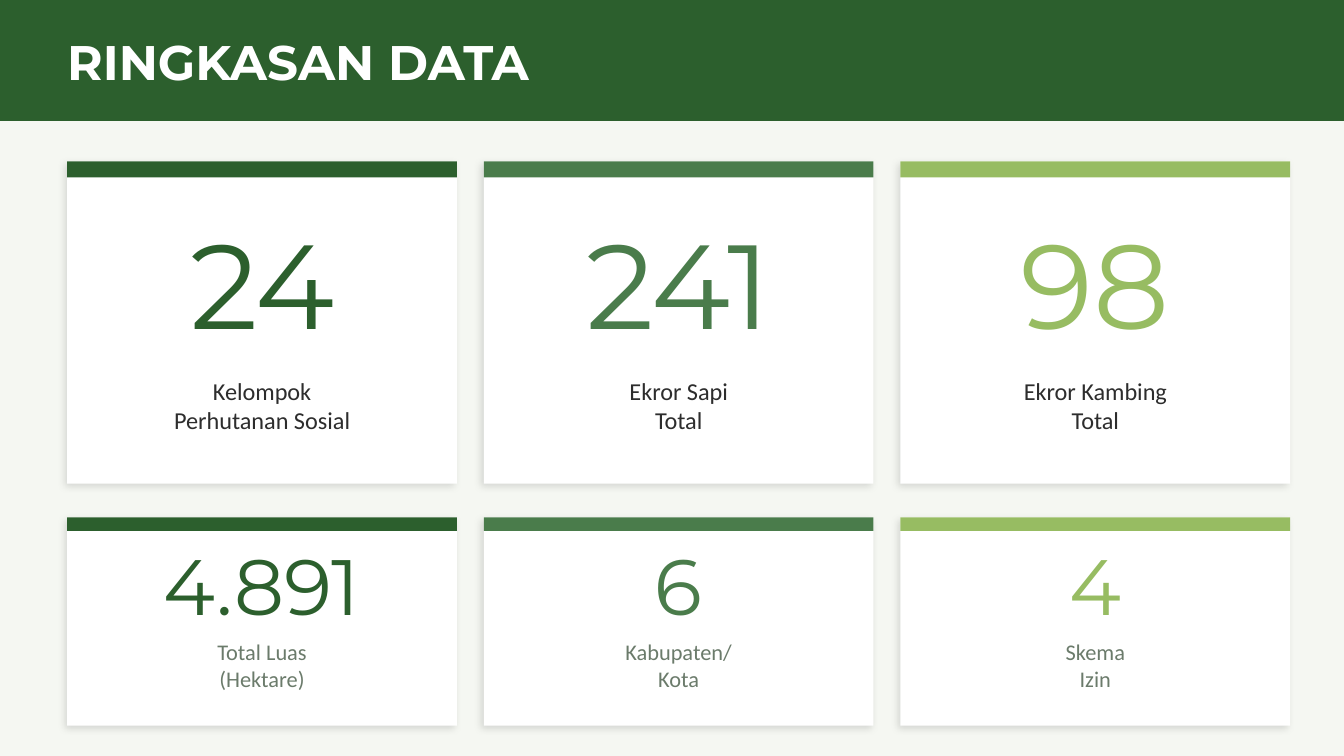
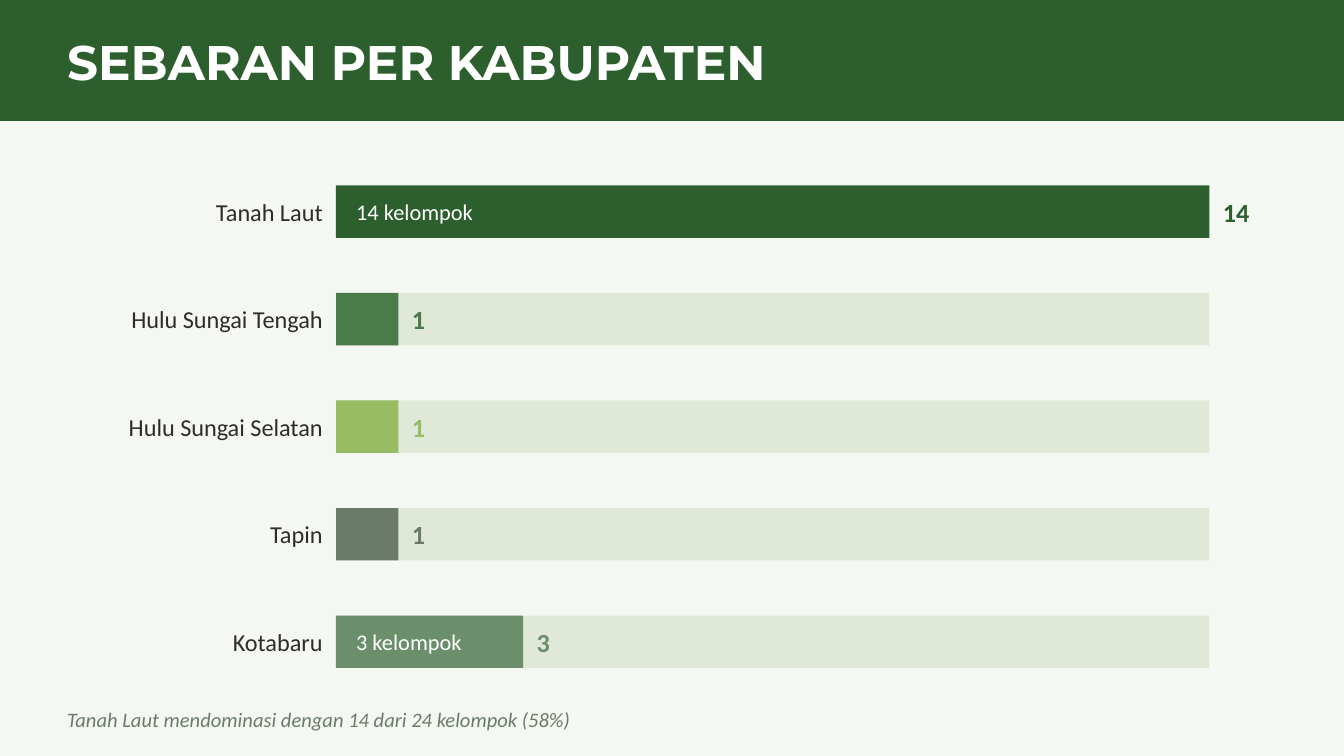
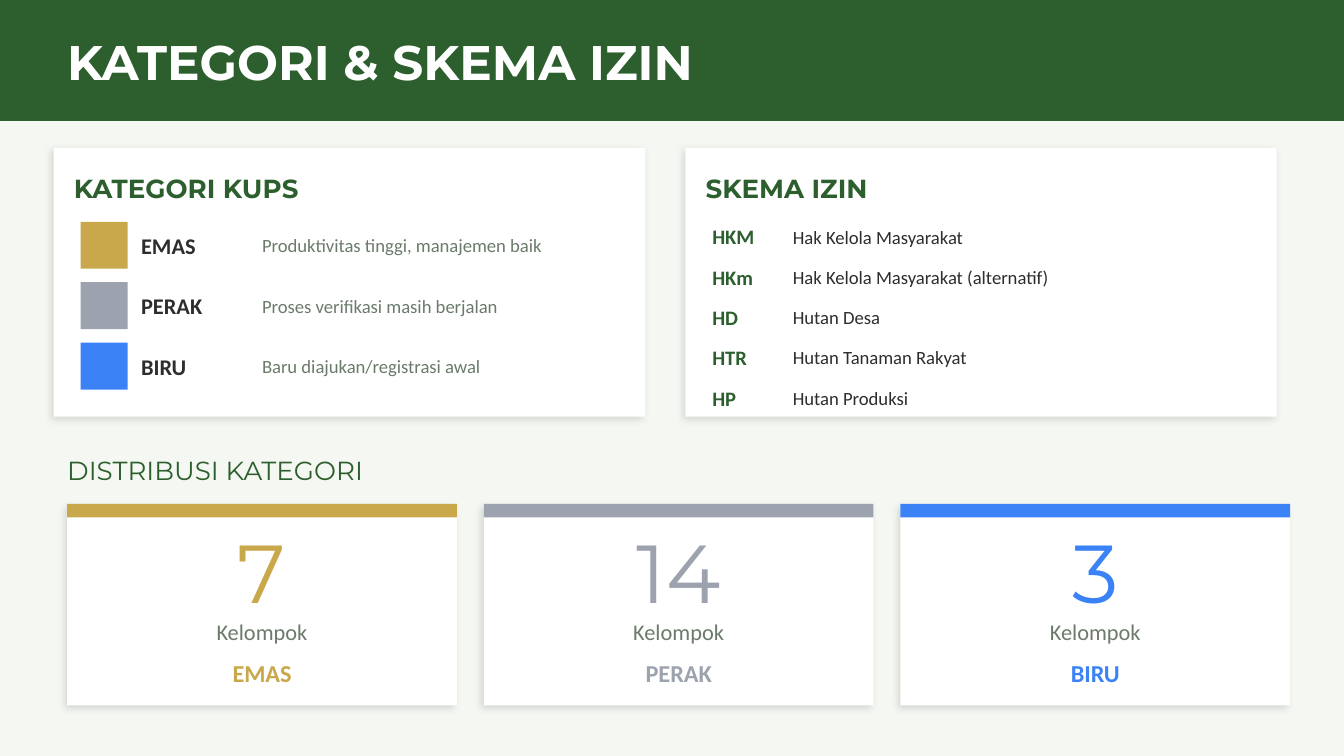
from lxml import etree
from pptx import Presentation
from pptx.dml.color import RGBColor
from pptx.enum import shapes, text
from pptx.oxml import ns
from pptx.util import Inches, Pt

FOREST = RGBColor(0x2C, 0x5F, 0x2D)
MOSS = RGBColor(0x4A, 0x7C, 0x4B)
LIME = RGBColor(0x97, 0xBC, 0x62)
SAGE = RGBColor(0x6B, 0x8E, 0x6B)
GREY = RGBColor(0x6B, 0x7B, 0x6B)
INK = RGBColor(0x2D, 0x2D, 0x2D)
TRACK = RGBColor(0xE0, 0xE8, 0xD8)
PAPER = RGBColor(0xF5, 0xF7, 0xF2)
WHITE = RGBColor(0xFF, 0xFF, 0xFF)
GOLD = RGBColor(0xC9, 0xA8, 0x4C)
SILVER = RGBColor(0x9C, 0xA3, 0xAF)
BLUE = RGBColor(0x3B, 0x82, 0xF6)

HEAD_FONT = "Montserrat"
BODY_FONT = "Calibri"
LEFT = text.PP_ALIGN.LEFT
CENTER = text.PP_ALIGN.CENTER
RIGHT = text.PP_ALIGN.RIGHT
MIDDLE = text.MSO_ANCHOR.MIDDLE
TOP = text.MSO_ANCHOR.TOP

CARD_LEFT, CARD_WIDTH, CARD_STEP = 0.5, 2.9, 3.1
BAR_LEFT, BAR_WIDTH, BAR_HEIGHT = 2.5, 6.5, 0.39


def add_rect(s, x, y, w, h, color):
    sp = s.shapes.add_shape(shapes.MSO_SHAPE.RECTANGLE, Inches(x), Inches(y), Inches(w), Inches(h))
    sp.fill.solid()
    sp.fill.fore_color.rgb = color
    sp.line.fill.background()
    sp.shadow.inherit = False
    return sp


def add_panel(s, x, y, w, h):
    sp = add_rect(s, x, y, w, h, WHITE)
    effects = sp.element.spPr.find(ns.qn("a:effectLst"))
    shadow = etree.SubElement(effects, ns.qn("a:outerShdw"), blurRad=str(Pt(4)), dist=str(Pt(2)),
                              dir=str(135 * 60000), algn="bl", rotWithShape="0")
    color = etree.SubElement(shadow, ns.qn("a:srgbClr"), val="000000")
    etree.SubElement(color, ns.qn("a:alpha"), val="12000")


def write(sp, lines, size, color, font=BODY_FONT, align=LEFT, anchor=MIDDLE, bold=False, italic=False):
    tf = sp.text_frame
    tf.word_wrap = True
    tf.auto_size = text.MSO_AUTO_SIZE.NONE
    tf.vertical_anchor = anchor
    tf.margin_left = tf.margin_right = tf.margin_top = tf.margin_bottom = 0
    for i, line in enumerate(lines):
        p = tf.add_paragraph() if i else tf.paragraphs[0]
        p.alignment = align
        r = p.add_run()
        r.text = line
        r.font.name = font
        r.font.size = Pt(size)
        r.font.color.rgb = color
        r.font.bold = bold
        r.font.italic = italic


def add_text(s, x, y, w, h, lines, size, color, **style):
    sp = s.shapes.add_textbox(Inches(x), Inches(y), Inches(w), Inches(h))
    write(sp, lines, size, color, **style)


def add_titled_slide(prs, title):
    s = prs.slides.add_slide(prs.slide_layouts[5])
    sp = s.shapes.title
    sp.left, sp.top, sp.width, sp.height = Inches(0.5), Inches(0.18), Inches(9), Inches(0.55)
    write(sp, [title], 26, WHITE, font=HEAD_FONT, bold=True)
    band = add_rect(s, 0, 0, 10, 0.9, FOREST)
    sp.element.addprevious(band.element)
    return s


def add_card(s, column, y, h, strip_h, color, number, number_y, number_h, size):
    x = CARD_LEFT + column * CARD_STEP
    add_panel(s, x, y, CARD_WIDTH, h)
    add_rect(s, x, y, CARD_WIDTH, strip_h, color)
    add_text(s, x, number_y, CARD_WIDTH, number_h, [number], size, color, font=HEAD_FONT, align=CENTER)
    return x


def add_big_card(s, column, color, number, label):
    x = add_card(s, column, 1.2, 2.4, 0.12, color, number, 1.5, 1.2, 64)
    add_text(s, x + 0.1, 2.8, 2.7, 0.7, label, 13, INK, align=CENTER, anchor=TOP)


def add_small_card(s, column, color, number, label):
    x = add_card(s, column, 3.85, 1.55, 0.1, color, number, 3.95, 0.8, 42)
    add_text(s, x + 0.1, 4.75, 2.7, 0.55, label, 12, GREY, align=CENTER, anchor=TOP)


def add_category_card(s, column, color, number, category):
    x = add_card(s, column, 3.75, 1.5, 0.1, color, number, 3.9, 0.7, 44)
    add_text(s, x, 4.6, CARD_WIDTH, 0.3, ["Kelompok"], 12, GREY, align=CENTER, anchor=TOP)
    add_text(s, x, 4.9, CARD_WIDTH, 0.3, [category], 13, color, align=CENTER, anchor=TOP, bold=True)


def add_bar(s, y, district, count, most, color):
    width = BAR_WIDTH * count / most
    bar_y = y + 0.08
    add_text(s, 0.4, y, 2, 0.55, [district], 13, INK, align=RIGHT)
    if count < most:
        add_rect(s, BAR_LEFT, bar_y, BAR_WIDTH, BAR_HEIGHT, TRACK)
    add_rect(s, BAR_LEFT, bar_y, width, BAR_HEIGHT, color)
    add_text(s, BAR_LEFT + width + 0.1, y, 0.5, 0.55, [str(count)], 14, color, bold=True)
    if count > 1:
        add_text(s, BAR_LEFT + 0.15, bar_y, width - 0.3, BAR_HEIGHT, [f"{count} kelompok"], 12, WHITE)


def add_headed_panel(s, x, heading):
    add_panel(s, x, 1.1, 4.4, 2)
    add_text(s, x + 0.15, 1.2, 4.1, 0.4, [heading], 14, FOREST, font=HEAD_FONT, bold=True)


def build_summary(prs):
    s = add_titled_slide(prs, "RINGKASAN DATA")
    colors = (FOREST, MOSS, LIME)
    big = (
        ("24", ("Kelompok", "Perhutanan Sosial")),
        ("241", ("Ekror Sapi", "Total")),
        ("98", ("Ekror Kambing", "Total")),
    )
    small = (
        ("4.891", ("Total Luas", "(Hektare)")),
        ("6", ("Kabupaten/", "Kota")),
        ("4", ("Skema", "Izin")),
    )
    for add, cards in ((add_big_card, big), (add_small_card, small)):
        for column, (color, (number, label)) in enumerate(zip(colors, cards)):
            add(s, column, color, number, label)


def build_districts(prs):
    s = add_titled_slide(prs, "SEBARAN PER KABUPATEN")
    districts = (
        ("Tanah Laut", 14, FOREST),
        ("Hulu Sungai Tengah", 1, MOSS),
        ("Hulu Sungai Selatan", 1, LIME),
        ("Tapin", 1, GREY),
        ("Kotabaru", 3, SAGE),
    )
    most = max(count for _, count, _ in districts)
    for i, (district, count, color) in enumerate(districts):
        add_bar(s, 1.3 + 0.8 * i, district, count, most, color)
    add_text(s, 0.5, 5.2, 9, 0.3, ["Tanah Laut mendominasi dengan 14 dari 24 kelompok (58%)"],
             11, GREY, italic=True)


def build_categories(prs):
    s = add_titled_slide(prs, "KATEGORI & SKEMA IZIN")
    categories = (
        ("EMAS", GOLD, "Produktivitas tinggi, manajemen baik", "7"),
        ("PERAK", SILVER, "Proses verifikasi masih berjalan", "14"),
        ("BIRU", BLUE, "Baru diajukan/registrasi awal", "3"),
    )
    schemes = (
        ("HKM", "Hak Kelola Masyarakat"),
        ("HKm", "Hak Kelola Masyarakat (alternatif)"),
        ("HD", "Hutan Desa"),
        ("HTR", "Hutan Tanaman Rakyat"),
        ("HP", "Hutan Produksi"),
    )
    add_headed_panel(s, 0.4, "KATEGORI KUPS")
    for i, (category, color, meaning, _) in enumerate(categories):
        y = 1.65 + 0.45 * i
        add_rect(s, 0.6, y, 0.35, 0.35, color)
        add_text(s, 1.05, y, 0.9, 0.35, [category], 12, INK, bold=True)
        add_text(s, 1.95, y, 2.7, 0.35, [meaning], 10, GREY)

    add_headed_panel(s, 5.1, "SKEMA IZIN")
    for i, (code, scheme) in enumerate(schemes):
        y = 1.62 + 0.3 * i
        add_text(s, 5.3, y, 0.6, 0.28, [code], 11, FOREST, bold=True)
        add_text(s, 5.9, y, 3.4, 0.28, [scheme], 10, INK)

    add_text(s, 0.5, 3.3, 9, 0.4, ["DISTRIBUSI KATEGORI"], 14, FOREST, font=HEAD_FONT)
    for column, (category, color, _, number) in enumerate(categories):
        add_category_card(s, column, color, number, category)


def main():
    prs = Presentation()
    prs.slide_width = Inches(10)
    prs.slide_height = Inches(10 * 9 / 16)
    background = prs.slide_master.background.fill
    background.solid()
    background.fore_color.rgb = PAPER
    build_summary(prs)
    build_districts(prs)
    build_categories(prs)
    prs.save("out.pptx")


if __name__ == "__main__":
    main()
